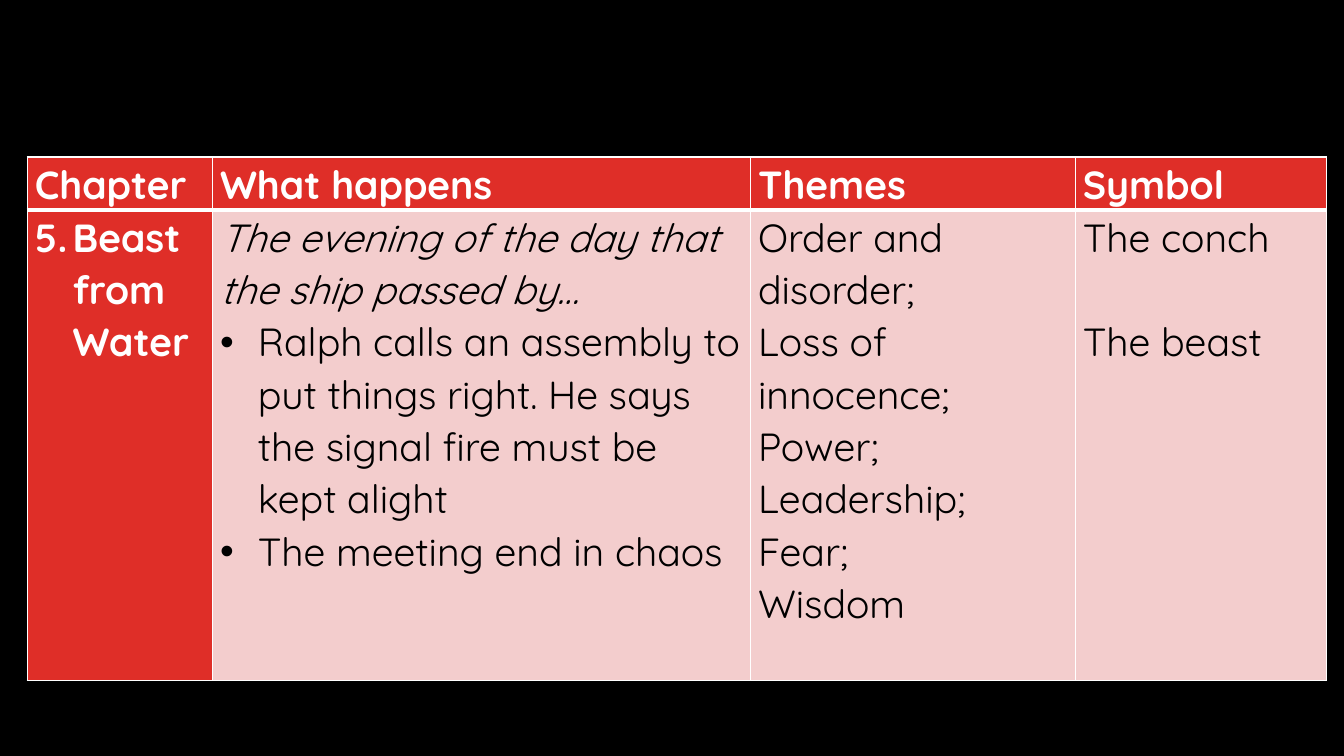
import pptx
import pptx.dml.color
import pptx.oxml
import pptx.oxml.ns
import pptx.util
from lxml import etree

Pt = pptx.util.Pt
BLACK = pptx.dml.color.RGBColor(0x00, 0x00, 0x00)
WHITE = pptx.dml.color.RGBColor(0xFF, 0xFF, 0xFF)
RED = pptx.dml.color.RGBColor(0xDF, 0x2E, 0x28)
PINK = pptx.dml.color.RGBColor(0xF3, 0xCD, 0xCD)

LINE_HEIGHT = 37.35
HEADINGS = ["Chapter", "What happens", "Themes", "Symbol"]
NUMBER_FIVE = ("buAutoNum", {"type": "arabicPeriod", "startAt": "5"})
DOT = ("buChar", {"char": "•"})
# Each cell holds paragraphs: text and its format.
CHAPTER_CELLS = [
    [("Beast from Water", {"bullet": NUMBER_FIVE, "bold": True, "color": WHITE})],
    [
        ("The evening of the day that the ship passed by…", {"italic": True}),
        ("Ralph calls an assembly to put things right. He says "
         "the signal fire must be kept alight", {"bullet": DOT}),
        ("The meeting end in chaos", {"bullet": DOT}),
    ],
    [(theme, {}) for theme in ("Order and disorder;", "Loss of innocence;", "Power;",
                               "Leadership;", "Fear;", "Wisdom")],
    [("The conch", {}), ("The beast", {"space_before": LINE_HEIGHT})],
]


def write_text(paragraph, text, *, bullet=None, bold=False, italic=False,
               color=BLACK, size=28, font="Quicksand", space_before=0):
    if bullet:
        tag, attributes = bullet
        properties = paragraph._p.get_or_add_pPr()
        properties.set("marL", str(Pt(27)))
        properties.set("indent", str(-Pt(27)))
        if tag == "buChar":
            etree.SubElement(properties, pptx.oxml.ns.qn("a:buFont"), typeface="Arial")
        etree.SubElement(properties, pptx.oxml.ns.qn("a:" + tag), attributes)
    paragraph.line_spacing = 1.07
    paragraph.space_before = Pt(space_before)
    run = paragraph.add_run()
    run.text = text
    run.font.name = font
    run.font.size = Pt(size)
    run.font.bold = bold
    run.font.italic = italic
    run.font.color.rgb = color


class SlideBuilder:
    """Holds the current slide and the style of its tables."""

    border_color = WHITE
    side_margin = Pt(5.4)

    def __init__(self, slide, background):
        self.slide = slide
        slide.background.fill.solid()
        slide.background.fill.fore_color.rgb = background

    def table(self, left, top, widths, heights):
        shape = self.slide.shapes.add_table(
            len(heights), len(widths), Pt(left), Pt(top), Pt(sum(widths)), Pt(sum(heights)))
        table = shape.table
        table.first_row = table.horz_banding = False
        for column, width in zip(table.columns, widths):
            column.width = Pt(width)
        for row, height in zip(table.rows, heights):
            row.height = Pt(height)
        return table

    def cell(self, cell, paragraphs, fill, top_line=1, bottom_line=1):
        cell.margin_left = cell.margin_right = self.side_margin
        cell.margin_top = cell.margin_bottom = 0
        cell.fill.solid()
        cell.fill.fore_color.rgb = fill
        self.borders(cell, {"L": 1, "R": 1, "T": top_line, "B": bottom_line})
        for index, (text, text_format) in enumerate(paragraphs):
            frame = cell.text_frame
            paragraph = frame.add_paragraph() if index else frame.paragraphs[0]
            write_text(paragraph, text, **text_format)

    def borders(self, cell, widths):
        properties = cell._tc.get_or_add_tcPr()
        for index, (side, width) in enumerate(widths.items()):
            properties.insert(index, pptx.oxml.parse_xml(
                f'<a:ln{side} {pptx.oxml.ns.nsdecls("a")} w="{Pt(width)}"><a:solidFill>'
                f'<a:srgbClr val="{self.border_color}"/></a:solidFill></a:ln{side}>'))


def main():
    presentation = pptx.Presentation()
    presentation.slide_width = Pt(960)
    presentation.slide_height = Pt(540)
    slide = presentation.slides.add_slide(presentation.slide_layouts[6])
    builder = SlideBuilder(slide, BLACK)

    table = builder.table(19.5, 112.2, [132.3, 384.3, 232, 179.4], [37.6, 336.2])
    for column, (heading, paragraphs) in enumerate(zip(HEADINGS, CHAPTER_CELLS)):
        builder.cell(table.cell(0, column), [(heading, {"bold": True, "color": WHITE})],
                     RED, bottom_line=3)
        builder.cell(table.cell(1, column), paragraphs,
                     PINK if column else RED, top_line=3)
    presentation.save("out.pptx")


if __name__ == "__main__":
    main()
